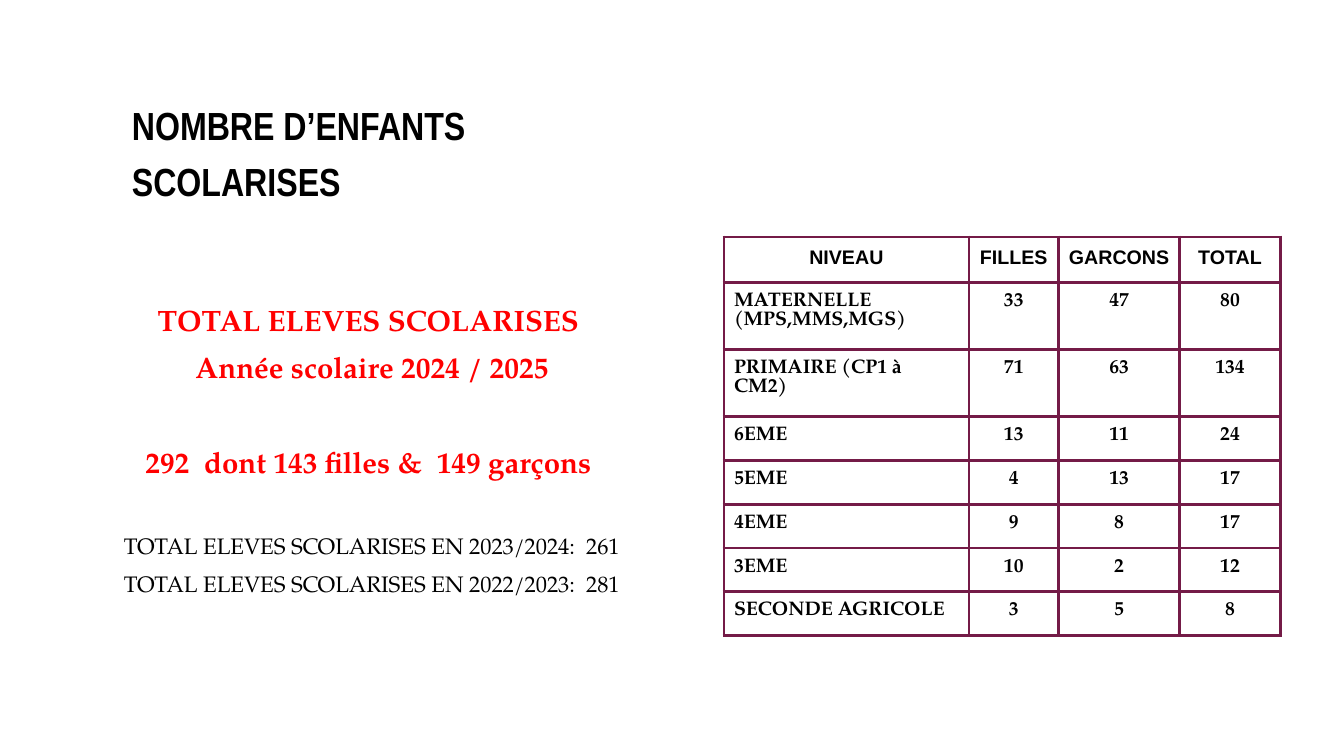
"""Build the slide on the number of children in school."""
import pptx
import pptx.chart.data
import pptx.dml.color
import pptx.enum.text
import pptx.oxml
import pptx.oxml.ns
import pptx.util
from pptx.util import Inches, Pt

SERIF = "TeX Gyre Pagella"
BLACK, RED, WHITE, PLUM = "000000", "FF0000", "FFFFFF", "741B47"
TITLE = "NOMBRE D’ENFANTS SCOLARISES"
LINES = [
    ("TOTAL ELEVES SCOLARISES ", 21, RED, True, 0),
    ("Année scolaire 2024 / 2025", 21, RED, True, 6),
    ("292  dont 143 filles &  149 garçons ", 21, RED, True, 40),
    ("TOTAL ELEVES SCOLARISES EN 2023/2024:  261", 16, BLACK, False, 36),
    ("TOTAL ELEVES SCOLARISES EN 2022/2023:  281", 16, BLACK, False, 6),
]
ROWS = [
    ("NIVEAU", "FILLES", "GARCONS", "TOTAL"),
    ("MATERNELLE (MPS,MMS,MGS)", 33, 47, 80),
    ("PRIMAIRE (CP1 à CM2)", 71, 63, 134),
    ("6EME", 13, 11, 24),
    ("5EME", 4, 13, 17),
    ("4EME", 9, 8, 17),
    ("3EME", 10, 2, 12),
    ("SECONDE AGRICOLE", 3, 5, 8),
]
WIDTHS = [2.43, 0.89, 1.2, 1]
HEIGHTS = [0.45] + [0.42] * 7
ALIGN = pptx.enum.text.PP_ALIGN


def tint(code):
    return pptx.dml.color.RGBColor.from_string(code)


def style(para, face, size, color, bold):
    for run in para.runs:
        run.font.name = face
        run.font.size = Pt(size)
        run.font.bold = bold
        run.font.color.rgb = tint(color)


def add_box(slide, left, top, width, height):
    frame = slide.shapes.add_textbox(*map(Inches, (left, top, width, height))).text_frame
    frame.word_wrap = True
    return frame


def add_edges(cell):
    props = cell._tc.get_or_add_tcPr()
    for n, side in enumerate(("lnL", "lnR", "lnT", "lnB")):
        props.insert(n, pptx.oxml.parse_xml(
            f'<a:{side} {pptx.oxml.ns.nsdecls("a")} w="{Pt(2.25)}"><a:solidFill>'
            f'<a:srgbClr val="{PLUM}"/></a:solidFill></a:{side}>'))


def add_grid(slide):
    shape = slide.shapes.add_table(
        len(ROWS), len(WIDTHS), Inches(7.18), Inches(2.35),
        Inches(sum(WIDTHS)), Inches(sum(HEIGHTS)))
    table = shape.table
    for col, width in zip(table.columns, WIDTHS):
        col.width = Inches(width)
    for r, row in enumerate(ROWS):
        table.rows[r].height = Inches(HEIGHTS[r])
        for c, value in enumerate(row):
            cell = table.cell(r, c)
            cell.margin_left = cell.margin_right = Inches(0.1)
            cell.margin_top = cell.margin_bottom = Inches(0.1)
            cell.fill.solid()
            cell.fill.fore_color.rgb = tint(WHITE)
            add_edges(cell)
            cell.text_frame.text = str(value)
            para = cell.text_frame.paragraphs[0]
            para.alignment = ALIGN.LEFT if r and not c else ALIGN.CENTER
            style(para, SERIF if r else "Arial", 14, BLACK, True)


def main():
    deck = pptx.Presentation()
    deck.slide_width, deck.slide_height = Inches(13.33), Inches(7.5)
    slide = deck.slides.add_slide(deck.slide_layouts[6])

    head = add_box(slide, 1.21, 0.83, 5.46, 1.25)
    head.vertical_anchor = pptx.enum.text.MSO_ANCHOR.BOTTOM
    head.text = TITLE
    head.paragraphs[0].line_spacing = 1.2
    style(head.paragraphs[0], "Arial Narrow", 28, BLACK, True)

    body = add_box(slide, 0.96, 2.91, 5.46, 3.22)
    body.text = "\n".join(line[0] for line in LINES)
    for para, (_, size, color, bold, gap) in zip(body.paragraphs, LINES):
        para.alignment = ALIGN.CENTER
        para.line_spacing = 1.1
        para.space_before = Pt(gap)
        style(para, SERIF, size, color, bold)

    add_grid(slide)
    deck.save("out.pptx")


if __name__ == "__main__":
    main()
